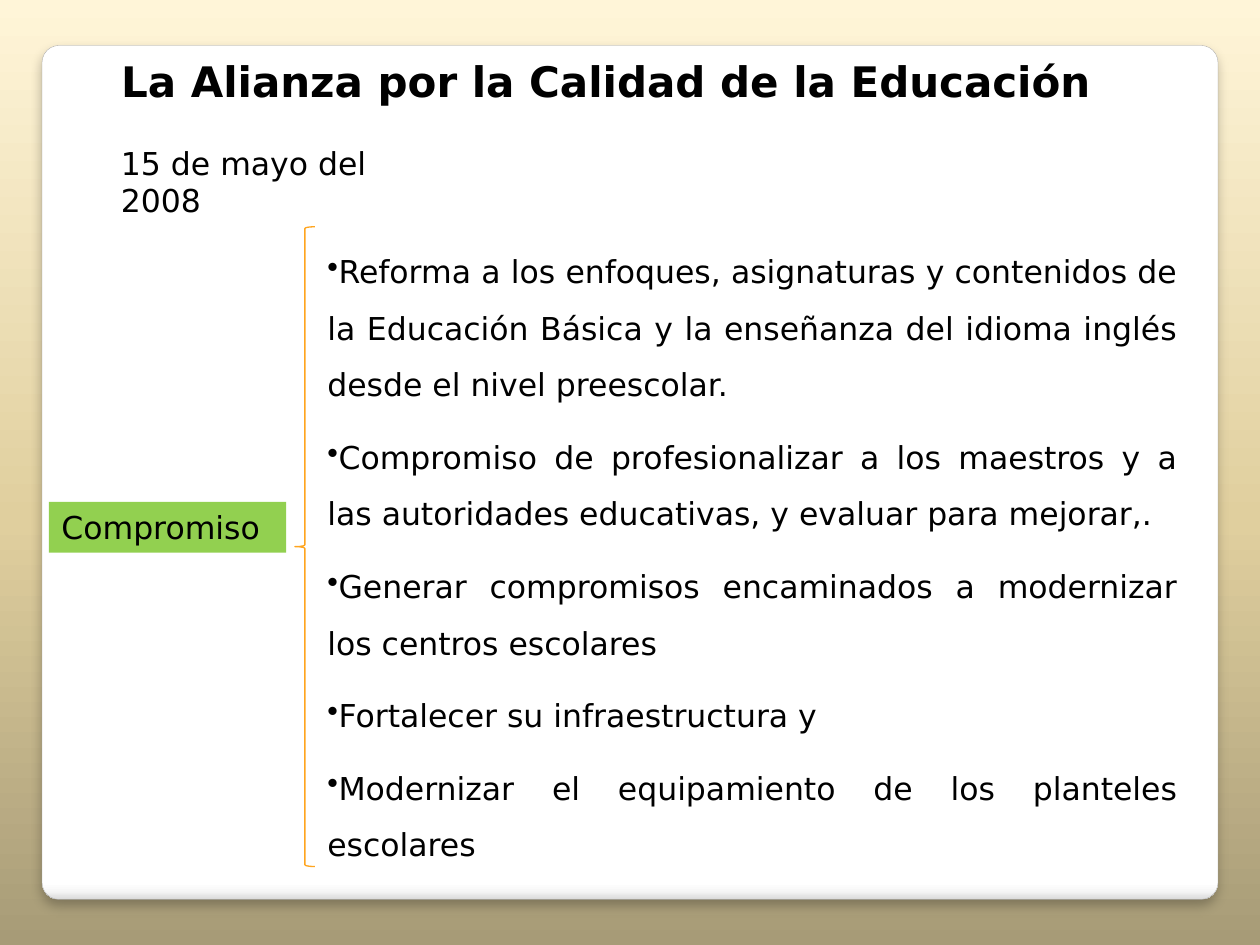
import pptx
import pptx.util
import pptx.dml.color
import pptx.enum.shapes
import pptx.enum.text
import pptx.oxml
import pptx.oxml.ns

Pt = pptx.util.Pt
SHAPES = pptx.enum.shapes.MSO_SHAPE
ALIGN = pptx.enum.text.PP_ALIGN
NAMESPACE = pptx.oxml.ns.nsdecls("a")

COMMITMENTS = [
    "Reforma a los enfoques, asignaturas y contenidos de la Educación Básica y la enseñanza del idioma inglés desde el nivel preescolar.",
    "Compromiso de profesionalizar a los maestros y a las autoridades educativas, y evaluar para mejorar,.",
    "Generar compromisos encaminados a modernizar los centros escolares",
    "Fortalecer su infraestructura y",
    "Modernizar el equipamiento de los planteles escolares",
]


def color(value):
    return pptx.dml.color.RGBColor.from_string(value)


def apply_format(target, values):
    for name, value in values.items():
        setattr(target, name, value)


def place(shape, left, top, width, height):
    apply_format(shape, {"left": Pt(left), "top": Pt(top), "width": Pt(width), "height": Pt(height)})


def paint_gradient(fill, element, stops, angle):
    fill.gradient()
    fill.gradient_angle = angle
    stop_list = element.xpath(".//a:gsLst")[0]
    for stop in list(stop_list):
        stop_list.remove(stop)
    for position, value in stops:
        stop_list.append(pptx.oxml.parse_xml(
            f'<a:gs {NAMESPACE} pos="{position * 1000}"><a:srgbClr val="{value}"/></a:gs>'))


def add_shape(page, kind, frame, fill=None, line=None, line_width=0.75):
    shape = page.shapes.add_shape(kind, *map(Pt, frame))
    shape.shadow.inherit = False
    if fill:
        shape.fill.solid()
        shape.fill.fore_color.rgb = color(fill)
    else:
        shape.fill.background()
    if line:
        shape.line.color.rgb = color(line)
        shape.line.width = Pt(line_width)
    else:
        shape.line.fill.background()
    return shape


def add_panel(page):
    panel = add_shape(page, SHAPES.ROUNDED_RECTANGLE, (24, 26, 672, 488), line="A4A4A4", line_width=0.16)
    panel.adjustments[0] = 0.02
    paint_gradient(panel.fill, panel.element,
                   [(0, "FFFFFF"), (98, "FFFFFF"), (99, "F7F7F7"), (100, "DADADA")], 270)
    effects = panel.element.xpath(".//a:effectLst")[0]
    effects.append(pptx.oxml.parse_xml(
        f'<a:outerShdw {NAMESPACE} blurRad="{Pt(6)}" dist="{Pt(4)}" dir="5400000" algn="t" rotWithShape="0">'
        '<a:srgbClr val="000000"><a:alpha val="25000"/></a:srgbClr></a:outerShdw>'))
    page.shapes.element.insert(2, panel.element) if hasattr(page.shapes, "element") else None


def write_text(shape, texts, size=18, bold=False, bullet=None, **paragraph_format):
    frame = shape.text_frame
    apply_format(frame, {"word_wrap": True,
                         "auto_size": pptx.enum.text.MSO_AUTO_SIZE.NONE,
                         "vertical_anchor": pptx.enum.text.MSO_ANCHOR.TOP})
    for index, text in enumerate(texts):
        para = frame.add_paragraph() if index else frame.paragraphs[0]
        apply_format(para, {"alignment": ALIGN.LEFT, **paragraph_format})
        span = para.add_run()
        span.text = text
        apply_format(span.font, {"name": "DejaVu Sans", "size": Pt(size), "bold": bold})
        span.font.color.rgb = color("000000")
        if bullet:
            para._p.get_or_add_pPr().append(
                pptx.oxml.parse_xml(f'<a:buChar {NAMESPACE} char="{bullet}"/>'))


def add_text(page, frame, texts, **text_format):
    box = page.shapes.add_textbox(*map(Pt, frame))
    write_text(box, texts, **text_format)


def add_title(page, frame, text):
    title = page.shapes.title
    place(title, *frame)
    write_text(title, [text], size=24, bold=True)
    page.shapes._spTree.append(title.element)


def main():
    deck = pptx.Presentation()
    apply_format(deck, {"slide_width": Pt(720), "slide_height": Pt(540)})
    page = deck.slides.add_slide(deck.slide_layouts[5])
    paint_gradient(page.background.fill, page.element,
                   [(0, "A79B77"), (45, "E0CF9E"), (100, "FFF5D8")], 90)
    add_panel(page)
    add_title(page, (62, 28, 580, 36), "La Alianza por la Calidad de la Educación")
    add_text(page, (180, 129.6, 500, 371), COMMITMENTS, bullet="•",
             alignment=ALIGN.JUSTIFY, line_spacing=1.5, space_after=Pt(9))
    add_text(page, (62, 78.5, 173, 29), ["15 de mayo del 2008"])
    label = add_shape(page, SHAPES.RECTANGLE, (28, 286.8, 135.5, 29), fill="92D050")
    write_text(label, ["Compromiso"])
    add_shape(page, SHAPES.LEFT_BRACE, (168.5, 129.6, 11.5, 365.6), line="FFA51F")
    deck.save("out.pptx")


if __name__ == "__main__":
    main()
